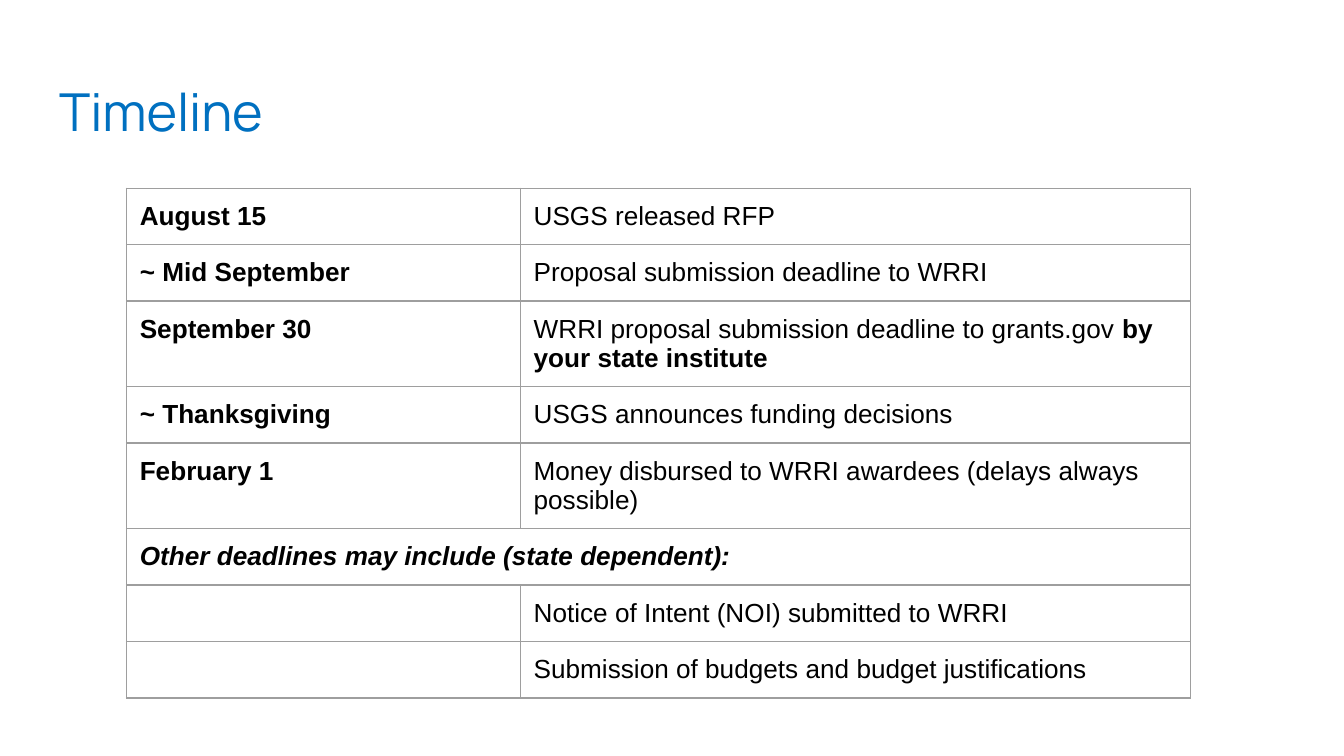
from lxml import etree
from pptx import Presentation
from pptx import util as u
from pptx.dml.color import RGBColor
from pptx.enum import text
from pptx.oxml import ns

COLORS = {"title": "0070C0", "text": "000000", "border": "9E9E9E"}
WIDTH = 10
HEIGHT = WIDTH * 9 / 16
TITLE_BOX = (0.34, 0.49, 9.32, 0.63)
TABLE_BOX = (0.94, 1.4, 7.92, 3.36)
DATE_SHARE = 0.37
INSET = u.Inches(0.1)
BODY_SIZE, BODY_FONT = 14, "Arial"
ROWS = [
    ("August 15", ["USGS released RFP"]),
    ("~ Mid September", ["Proposal submission deadline to WRRI"]),
    ("September 30", ["WRRI proposal submission deadline to grants.gov ",
                      "by your state institute"]),
    ("~ Thanksgiving", ["USGS announces funding decisions"]),
    ("February 1", ["Money disbursed to WRRI awardees (delays always possible)"]),
    ("Other deadlines may include (state dependent):", []),
    ("", ["Notice of Intent (NOI) submitted to WRRI"]),
    ("", ["Submission of budgets and budget justifications"]),
]


def add_run(p, words, size, font, color, bold=False, italic=False):
    """Append one formatted run to a paragraph."""
    r = p.add_run()
    r.text = words
    r.font.size, r.font.name = u.Pt(size), font
    r.font.bold, r.font.italic = bold, italic
    r.font.color.rgb = RGBColor.from_string(COLORS[color])


def set_insets(frame):
    """Give a text frame or cell equal margins on all sides."""
    frame.margin_left = frame.margin_right = INSET
    frame.margin_top = frame.margin_bottom = INSET


def set_borders(cell):
    """Draw a thin line on all four sides of a cell."""
    pr = cell._tc.get_or_add_tcPr()
    for i, side in enumerate(("lnL", "lnR", "lnT", "lnB")):
        ln = etree.Element(ns.qn(f"a:{side}"), w=str(u.Pt(0.75)))
        fill = etree.SubElement(ln, ns.qn("a:solidFill"))
        etree.SubElement(fill, ns.qn("a:srgbClr"), val=COLORS["border"])
        pr.insert(i, ln)


def fill_cell(cell, runs):
    """Format a cell and write its (words, bold, italic) runs."""
    set_insets(cell)
    cell.vertical_anchor = text.MSO_ANCHOR.TOP
    cell.fill.background()
    set_borders(cell)
    p = cell.text_frame.paragraphs[0]
    for words, bold, italic in runs:
        add_run(p, words, BODY_SIZE, BODY_FONT, "text", bold, italic)
    if not runs:
        end = etree.SubElement(p._p, ns.qn("a:endParaRPr"), sz=str(BODY_SIZE * 100))
        etree.SubElement(end, ns.qn("a:latin"), typeface=BODY_FONT)


def add_title(slide, box, words):
    """Place and format the title placeholder."""
    sp = slide.shapes.title
    sp.left, sp.top, sp.width, sp.height = map(u.Inches, box)
    tf = sp.text_frame
    set_insets(tf)
    tf.word_wrap = True
    tf.auto_size = text.MSO_AUTO_SIZE.NONE
    tf.vertical_anchor = text.MSO_ANCHOR.TOP
    p = tf.paragraphs[0]
    p.alignment = text.PP_ALIGN.LEFT
    add_run(p, words, 28, "Manrope", "title")


def add_timeline(slide, box, rows):
    """Build the table of dates and events inside a box."""
    table = slide.shapes.add_table(len(rows), 2, *map(u.Inches, box)).table
    table.first_row = table.horz_banding = False
    for col, share in zip(table.columns, (DATE_SHARE, 1 - DATE_SHARE)):
        col.width = u.Inches(box[2] * share)
    for i, (date, events) in enumerate(rows):
        left, right = table.cell(i, 0), table.cell(i, 1)
        fill_cell(left, [(date, True, not events)] if date else [])
        fill_cell(right, [(words, n > 0, False) for n, words in enumerate(events)])
        if not events:
            left.merge(right)


def main():
    """Build and save the slide."""
    prs = Presentation()
    prs.slide_width, prs.slide_height = u.Inches(WIDTH), u.Inches(HEIGHT)
    slide = prs.slides.add_slide(prs.slide_layouts[5])
    add_title(slide, TITLE_BOX, "Timeline")
    add_timeline(slide, TABLE_BOX, ROWS)
    prs.save("out.pptx")


if __name__ == "__main__":
    main()
